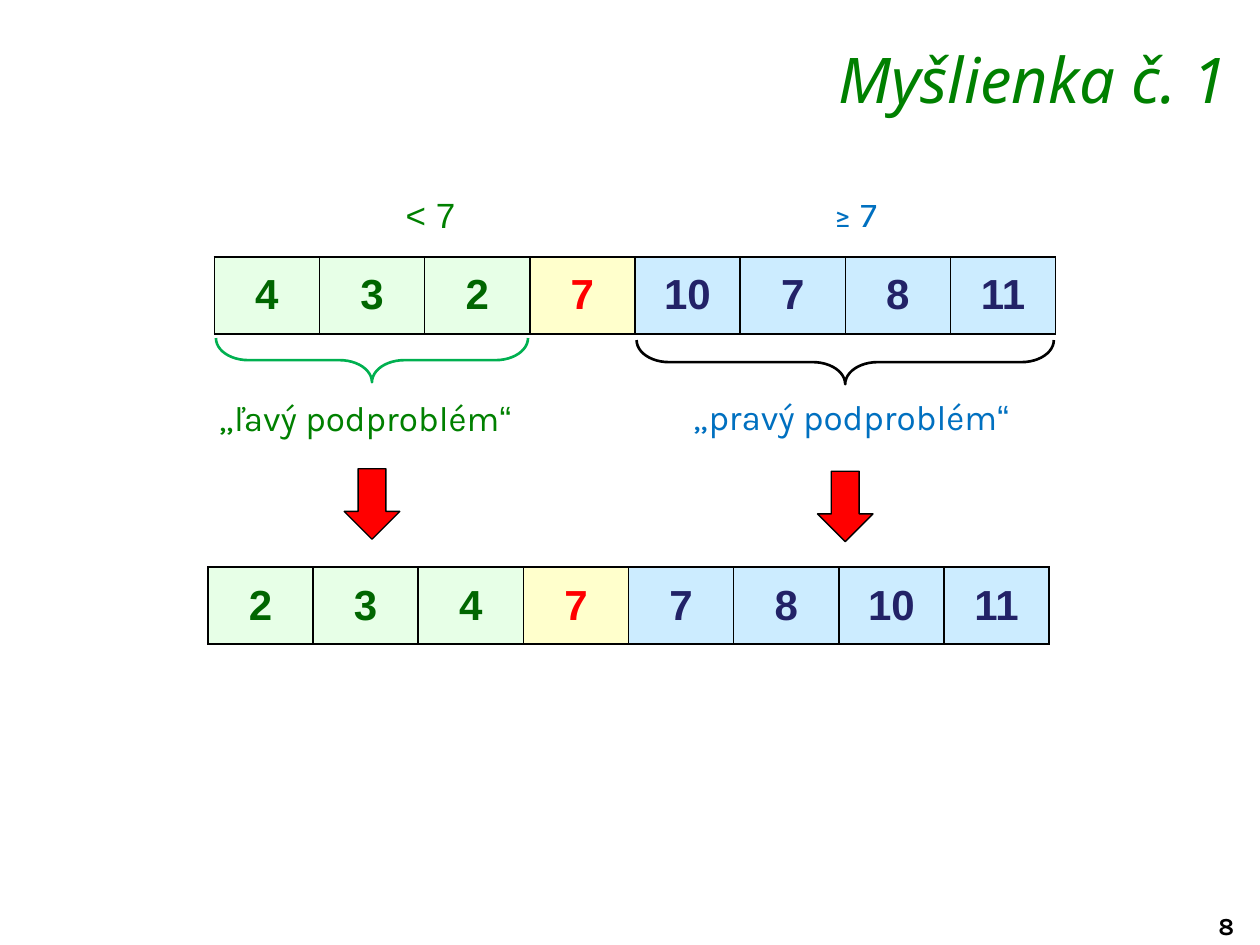
"""Build the slide on splitting a list around a pivot and sorting both parts."""
from lxml import etree
from pptx import Presentation
from pptx import util as u
from pptx.dml.color import RGBColor
from pptx.enum import shapes, text
from pptx.oxml.ns import qn

Cm = u.Cm
TITLE = "Myšlienka č. 1"
PAGE = "8"
CELL_W, CELL_H = 2.12, 1.55
SPLIT_LEFT, SPLIT_TOP = 4.32, 5.18
STYLES = [("E7FFE7", "006600")] * 3 + [("FFFFCC", "FF0000")] + [("CCECFF", "222267")] * 4
ROWS = [
    (SPLIT_LEFT, SPLIT_TOP, [4, 3, 2, 7, 10, 7, 8, 11]),
    (4.19, 11.43, [2, 3, 4, 7, 7, 8, 10, 11]),
]
LABELS = [
    (4.06, 7.87, 6.6, [("„ľavý podproblém", "Karla"), ("“", "Arial")], "008000"),
    (13.31, 7.85, 7.7, [("„pravý podproblém", "Karla"), ("“", "Arial")], "0070C0"),
    (5.38, 3.78, 6.6, [("< 7", "Arial")], "008000"),
    (13.39, 3.76, 7.7, [("≥ 7", "Karla")], "0070C0"),
]
PARTS = [
    dict(first=0, count=3, brace_y=7.26, brace="00B050", arrow_top=9.45),
    dict(first=4, count=4, brace_y=7.3, brace="000000", arrow_top=9.5),
]
BRACE_DEPTH, ARROW_W, ARROW_H = 0.89, 1.12, 1.42


def rgb(value):
    return RGBColor.from_string(value)


def write(tf, runs, size, color, align=text.PP_ALIGN.CENTER, bold=False, italic=False):
    p = tf.paragraphs[0]
    p.alignment = align
    for content, font in runs:
        r = p.add_run()
        r.text = content
        r.font.name, r.font.size = font, u.Pt(size)
        r.font.bold, r.font.italic = bold, italic
        r.font.color.rgb = rgb(color)


def add_label(s, left, top, width, height, runs, size, color, **kw):
    tf = s.shapes.add_textbox(Cm(left), Cm(top), Cm(width), Cm(height)).text_frame
    tf.word_wrap = True
    write(tf, runs, size, color, **kw)


def add_outlined(s, kind, cx, cy, width, height, line, points, fill=None):
    sp = s.shapes.add_shape(kind, Cm(cx - width / 2), Cm(cy - height / 2), Cm(width), Cm(height))
    sp.shadow.inherit = False
    sp.line.color.rgb, sp.line.width = rgb(line), u.Pt(points)
    if fill:
        sp.fill.solid()
        sp.fill.fore_color.rgb = rgb(fill)
    else:
        sp.fill.background()
    return sp


def add_border(cell):
    props = cell._tc.get_or_add_tcPr()
    for i, side in enumerate(("a:lnL", "a:lnR", "a:lnT", "a:lnB")):
        ln = etree.Element(qn(side), w=str(u.Pt(1)))
        fill = etree.SubElement(ln, qn("a:solidFill"))
        etree.SubElement(fill, qn("a:srgbClr"), val="000000")
        props.insert(i, ln)


def add_row(s, left, top, values):
    frame = s.shapes.add_table(1, len(values), Cm(left), Cm(top),
                               Cm(CELL_W * len(values)), Cm(CELL_H))
    for i, (value, (fill, color)) in enumerate(zip(values, STYLES)):
        frame.table.columns[i].width = Cm(CELL_W)
        cell = frame.table.cell(0, i)
        cell.vertical_anchor = text.MSO_ANCHOR.MIDDLE
        cell.fill.solid()
        cell.fill.fore_color.rgb = rgb(fill)
        add_border(cell)
        write(cell.text_frame, [(str(value), "Arial")], 24, color, bold=True)


def add_part(s, first, count, brace_y, brace, arrow_top):
    cx = SPLIT_LEFT + (first + count / 2) * CELL_W
    sp = add_outlined(s, shapes.MSO_SHAPE.LEFT_BRACE, cx, brace_y,
                      BRACE_DEPTH, count * CELL_W - 0.07, brace, 1.5)
    sp.rotation = 270
    sp.adjustments[0], sp.adjustments[1] = 0.73, 0.5
    add_outlined(s, shapes.MSO_SHAPE.DOWN_ARROW, cx, arrow_top + ARROW_H / 2,
                 ARROW_W, ARROW_H, "000000", 0.75, fill="FF0000")


def main():
    prs = Presentation()
    prs.slide_width, prs.slide_height = Cm(25.4), Cm(19.05)
    s = prs.slides.add_slide(prs.slide_layouts[5])
    title = s.shapes.title
    title.left, title.top, title.width, title.height = Cm(5.82), Cm(0.79), Cm(19.18), Cm(1.47)
    tf = title.text_frame
    tf.auto_size = text.MSO_AUTO_SIZE.NONE
    tf.vertical_anchor = text.MSO_ANCHOR.TOP
    tf.margin_top = tf.margin_bottom = Cm(0.03)
    write(tf, [(TITLE, "Noto Sans")], 36, "008000", align=text.PP_ALIGN.RIGHT, italic=True)
    for row in ROWS:
        add_row(s, *row)
    for part in PARTS:
        add_part(s, **part)
    for left, top, width, runs, color in LABELS:
        add_label(s, left, top, width, 1.12, runs, 20, color)
    add_label(s, 24.31, 18.24, 1.3, 0.84, [(PAGE, "Karla")], 14, "000000",
              align=text.PP_ALIGN.LEFT, bold=True)
    prs.save("out.pptx")


if __name__ == "__main__":
    main()
